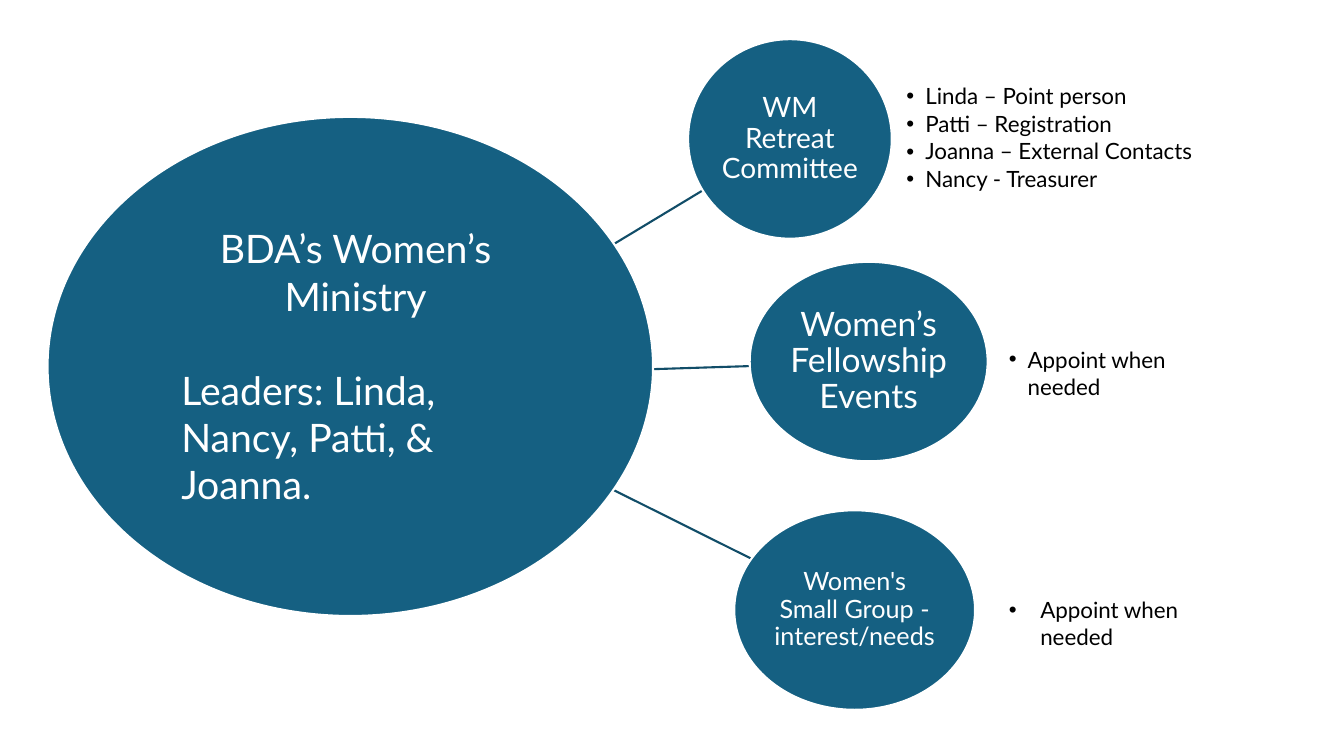
from lxml.etree import SubElement
from pptx import Presentation
from pptx.dml.color import RGBColor
from pptx.enum.shapes import MSO_CONNECTOR, MSO_SHAPE
from pptx.enum.text import MSO_ANCHOR, PP_ALIGN
from pptx.oxml.ns import qn
from pptx.util import Pt

COLORS = {"circle": "156082", "line": "114D68", "white": "FFFFFF", "black": "000000"}
FONT = "Lato"
CIRCLE_HEIGHT = 142.5
HUB_CENTER_X = 362

deck = Presentation()
deck.slide_width, deck.slide_height = Pt(960), Pt(540)
page = deck.slides.add_slide(deck.slide_layouts[6])


def write_text(shape, lines, size, color="white", align=PP_ALIGN.LEFT, anchor=MSO_ANCHOR.TOP,
               margins=(7.2, 3.6), spacing=1.0, before=0, after=0, bullet_indent=0):
    """Fill a shape with one paragraph per line; before is the gap above later ones."""
    frame = shape.text_frame
    frame.word_wrap = True
    frame.vertical_anchor = anchor
    frame.margin_left = frame.margin_right = Pt(margins[0])
    frame.margin_top = frame.margin_bottom = Pt(margins[1])
    for index, line in enumerate(lines):
        para = frame.add_paragraph() if index else frame.paragraphs[0]
        para.alignment = align
        para.line_spacing = spacing
        para.space_before = Pt(before if index else 0)
        para.space_after = Pt(after)
        span = para.add_run()
        span.text = line
        span.font.name = FONT
        span.font.size = Pt(size)
        span.font.color.rgb = RGBColor.from_string(COLORS[color])
        if bullet_indent:
            properties = para._p.get_or_add_pPr()
            properties.set("marL", str(Pt(bullet_indent)))
            properties.set("indent", str(-Pt(bullet_indent)))
            SubElement(properties, qn("a:buFont"), typeface="Arial")
            SubElement(properties, qn("a:buChar"), char="•")
    return frame


def add_circle(left, top, width, height):
    circle = page.shapes.add_shape(MSO_SHAPE.OVAL, Pt(left), Pt(top), Pt(width), Pt(height))
    circle.shadow.inherit = False
    circle.fill.solid()
    circle.fill.fore_color.rgb = RGBColor.from_string(COLORS["circle"])
    circle.line.color.rgb = RGBColor.from_string(COLORS["white"])
    circle.line.width = Pt(1.5)
    return circle


# Spokes lie behind the circles: y at the hub, then the outer end
for hub_y, end_x, end_y in [(312, 536.5, 399), (267, 535.5, 261.5), (220.5, 502, 136)]:
    spoke = page.shapes.add_connector(
        MSO_CONNECTOR.STRAIGHT, Pt(HUB_CENTER_X), Pt(hub_y), Pt(end_x), Pt(end_y))
    spoke.line.color.rgb = RGBColor.from_string(COLORS["line"])
    spoke.line.width = Pt(1.5)
    SubElement(spoke._element.spPr, qn("a:effectLst"))

# Ministry hub
add_circle(34, 83.5, 432.5, 356.5)
hub_box = page.shapes.add_textbox(Pt(122.5), Pt(157), Pt(263), Pt(211))
hub_frame = write_text(
    hub_box, ["BDA’s Women’s Ministry", "Leaders: Linda, Nancy, Patti, & Joanna."], 28, before=33.6)
hub_frame.paragraphs[0].alignment = PP_ALIGN.CENTER

# Teams around the hub: left, top, width, name, size
teams = [
    (491.5, 28, 145.5, "WM Retreat Committee", 20),
    (535.5, 187, 170, "Women’s Fellowship Events", 24),
    (524.5, 364.5, 172, "Women's Small Group - interest/needs", 18),
]
for left, top, width, name, size in teams:
    write_text(add_circle(left, top, width, CIRCLE_HEIGHT), [name], size, align=PP_ALIGN.CENTER,
               anchor=MSO_ANCHOR.MIDDLE, margins=(1, 1), spacing=0.9)

# People for each team
retreat_box = page.shapes.add_textbox(Pt(647.5), Pt(28), Pt(217.5), Pt(CIRCLE_HEIGHT))
write_text(retreat_box,
           ["Linda – Point person", "Patti – Registration",
            "Joanna – External Contacts", "Nancy - Treasurer"],
           16, color="black", anchor=MSO_ANCHOR.MIDDLE, margins=(0, 0),
           spacing=0.9, after=2.4, bullet_indent=13.5)

for top, indent in [(243.5, 13.5), (422.5, 22.5)]:
    appoint_box = page.shapes.add_textbox(Pt(713.5), Pt(top), Pt(175), Pt(48))
    write_text(appoint_box, ["Appoint when needed"], 16, color="black", bullet_indent=indent)

deck.save("out.pptx")
